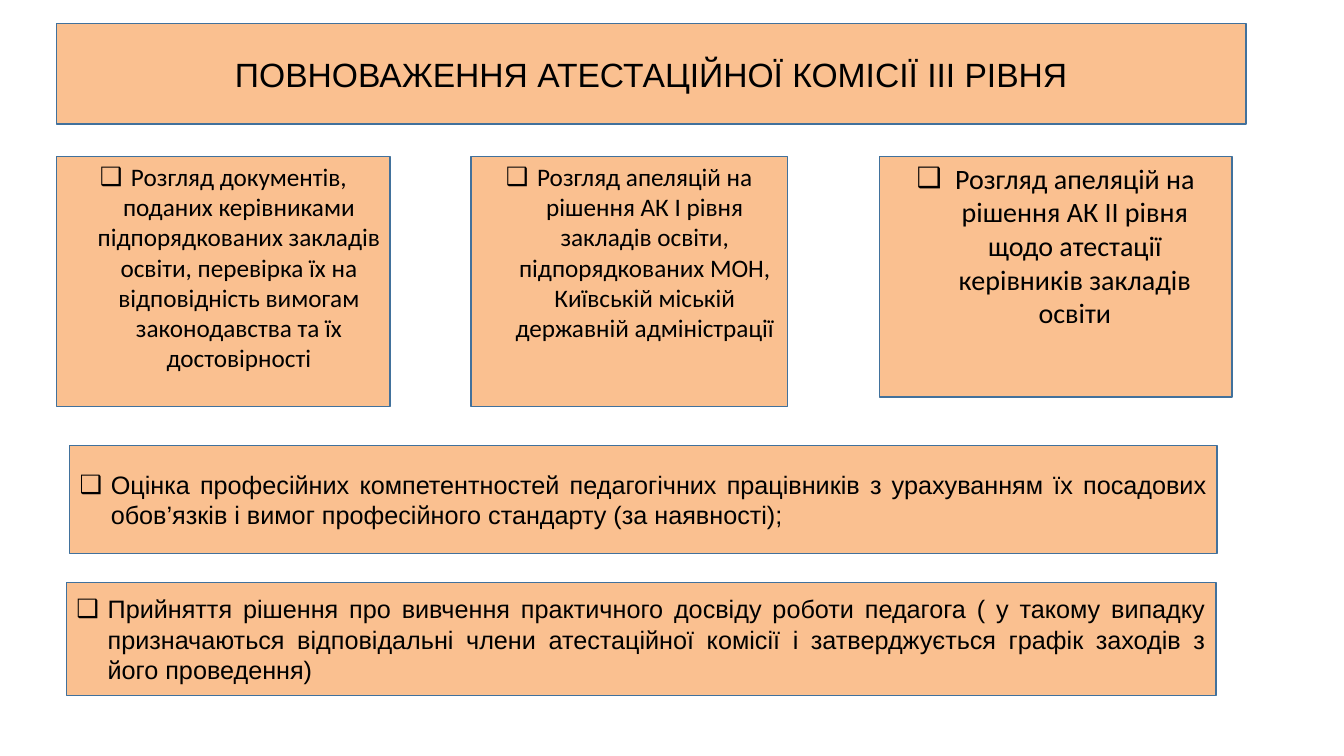
from lxml.etree import SubElement
from pptx import Presentation
from pptx.dml.color import RGBColor
from pptx.enum.shapes import MSO_SHAPE as Shape
from pptx.enum.text import MSO_ANCHOR as Anchor, PP_ALIGN as Align
from pptx.oxml.ns import qn
from pptx.util import Inches, Pt

WIDE, HIGH = Inches(13.33), Inches(7.5)
PEACH = RGBColor(0xFA, 0xC0, 0x90)
BLUE = RGBColor(0x41, 0x71, 0x9C)
BLACK = RGBColor(0, 0, 0)

# Shares of the slide in percent
EDGE = 4.2
CARD_TOP = 20.67

TITLE = "ПОВНОВАЖЕННЯ АТЕСТАЦІЙНОЇ КОМІСІЇ ІІІ РІВНЯ"

# left, width, height, text size, indent, text
CARDS = [
    (EDGE, 24.83, 33.07, 18, 0.31,
     "Розгляд документів, поданих керівниками підпорядкованих закладів "
     "освіти, перевірка їх на відповідність вимогам законодавства та їх "
     "достовірності"),
    (35.03, 23.56, 33.07, 18, 0.31,
     "Розгляд апеляцій на рішення АК І рівня закладів освіти, "
     "підпорядкованих МОН, Київській міській державній адміністрації"),
    (65.42, 26.26, 31.87, 20, 0.38,
     "Розгляд апеляцій на рішення АК ІІ рівня щодо атестації керівників "
     "закладів освіти"),
]

# left, top, width, height, text
BARS = [
    (5.18, 58.93, 85.37, 14.27,
     "Оцінка професійних компетентностей педагогічних працівників з "
     "урахуванням їх посадових обов’язків і вимог професійного стандарту "
     "(за наявності);"),
    (4.95, 77.07, 85.52, 14.93,
     "Прийняття рішення про вивчення практичного досвіду роботи педагога "
     "( у такому випадку призначаються відповідальні члени атестаційної "
     "комісії і затверджується графік заходів з його проведення)"),
]


def add_box(slide, left, top, width, height, anchor):
    """Add a peach box, placed in percent of the slide; return its text frame."""
    box = slide.shapes.add_shape(
        Shape.RECTANGLE,
        round(WIDE * left / 100), round(HIGH * top / 100),
        round(WIDE * width / 100), round(HIGH * height / 100))
    box.shadow.inherit = False
    box.fill.solid()
    box.fill.fore_color.rgb = PEACH
    box.line.color.rgb = BLUE
    box.line.width = Pt(1)
    frame = box.text_frame
    frame.word_wrap = True
    frame.vertical_anchor = anchor
    return frame


def write(frame, text, size, font, align):
    para = frame.paragraphs[0]
    para.alignment = align
    run = para.add_run()
    run.text = text
    run.font.size = Pt(size)
    run.font.name = font
    run.font.color.rgb = BLACK
    return para


def add_bullet(para, indent):
    """Hang the paragraph by indent inches behind a square bullet."""
    props = para._p.get_or_add_pPr()
    props.set("marL", str(Inches(indent)))
    props.set("indent", str(-Inches(indent)))
    SubElement(props, qn("a:buFont")).set("typeface", "Arial")
    SubElement(props, qn("a:buChar")).set("char", "❑")


def main():
    deck = Presentation()
    deck.slide_width, deck.slide_height = WIDE, HIGH
    slide = deck.slides.add_slide(deck.slide_layouts[6])

    frame = add_box(slide, EDGE, 3.07, 88.52, 13.33, Anchor.MIDDLE)
    write(frame, TITLE, 24, "Arial", Align.CENTER)

    for left, width, height, size, indent, text in CARDS:
        frame = add_box(slide, left, CARD_TOP, width, height, Anchor.TOP)
        add_bullet(write(frame, text, size, "Calibri", Align.CENTER), indent)

    for left, top, width, height, text in BARS:
        frame = add_box(slide, left, top, width, height, Anchor.MIDDLE)
        add_bullet(write(frame, text, 18, "Arial", Align.JUSTIFY), 0.31)

    deck.save("out.pptx")


if __name__ == "__main__":
    main()
